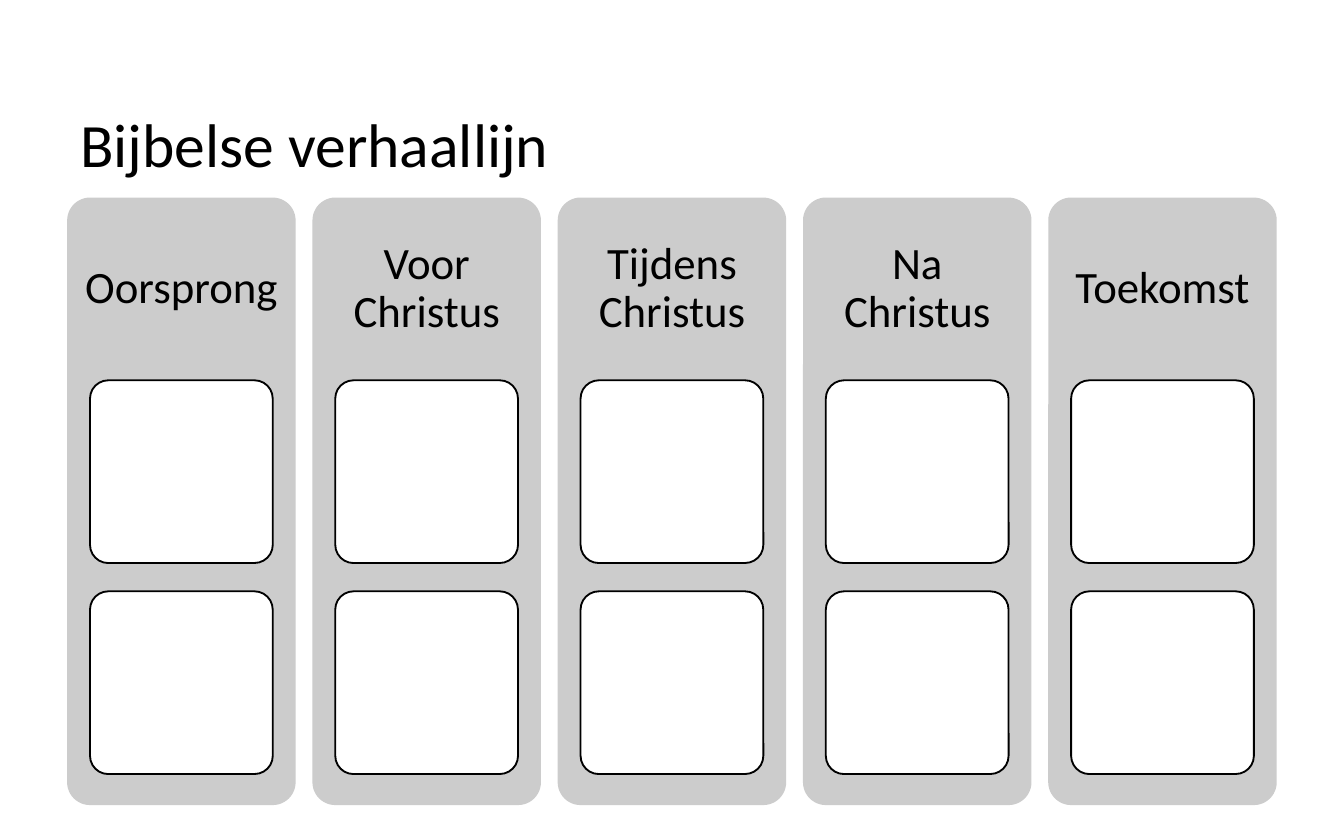
from pptx import Presentation
from pptx.dml.color import RGBColor
from pptx.enum.shapes import MSO_SHAPE
from pptx.enum.text import MSO_ANCHOR, PP_ALIGN
from pptx.util import Inches, Pt

COLORS = {"panel": "CCCCCC", "card": "FFFFFF", "ink": "000000"}
FONT = "Calibri"

PERIODS = ["Oorsprong", "Voor Christus", "Tijdens Christus", "Na Christus", "Toekomst"]

# Column grid, in inches
LEFT, TOP = 0.5, 1.47
TOTAL_WIDTH = 9
PANEL_WIDTH, PANEL_HEIGHT = 1.7, 4.52
PITCH = (TOTAL_WIDTH - PANEL_WIDTH) / (len(PERIODS) - 1)
HEADING_HEIGHT = 1.36
CARD_SIZE = 1.36
CARD_INDENT = (PANEL_WIDTH - CARD_SIZE) / 2
CARD_TOPS = [2.83, 4.4]


def color(name):
    return RGBColor.from_string(COLORS[name])


def add_text(slide, text, left, top, width, height, *, size,
             align=PP_ALIGN.LEFT, margin_x=0.1, margin_y=0.05):
    box = slide.shapes.add_textbox(Inches(left), Inches(top), Inches(width), Inches(height))
    frame = box.text_frame
    frame.word_wrap = True
    frame.vertical_anchor = MSO_ANCHOR.MIDDLE
    frame.margin_left = frame.margin_right = Inches(margin_x)
    frame.margin_top = frame.margin_bottom = Inches(margin_y)
    paragraph = frame.paragraphs[0]
    paragraph.alignment = align
    paragraph.line_spacing = 0.9
    run = paragraph.add_run()
    run.text = text
    run.font.name = FONT
    run.font.size = Pt(size)
    run.font.color.rgb = color("ink")


def add_rounded(slide, left, top, width, height, *, fill, outline=None):
    shape = slide.shapes.add_shape(MSO_SHAPE.ROUNDED_RECTANGLE, Inches(left),
                                   Inches(top), Inches(width), Inches(height))
    shape.adjustments[0] = 0.1
    shape.shadow.inherit = False
    shape.fill.solid()
    shape.fill.fore_color.rgb = color(fill)
    if outline:
        shape.line.color.rgb = color(outline)
        shape.line.width = Pt(1)
    else:
        shape.line.fill.background()


def add_period(slide, name, left):
    """One column: grey panel, heading and empty cards."""
    add_rounded(slide, left, TOP, PANEL_WIDTH, PANEL_HEIGHT, fill="panel")
    add_text(slide, name, left, TOP, PANEL_WIDTH, HEADING_HEIGHT, size=24,
             align=PP_ALIGN.CENTER, margin_y=0.1)
    for card_top in CARD_TOPS:
        add_rounded(slide, left + CARD_INDENT, card_top, CARD_SIZE, CARD_SIZE,
                    fill="card", outline="ink")


def main():
    prs = Presentation()
    prs.slide_width, prs.slide_height = Inches(10), Inches(6.25)
    slide = prs.slides.add_slide(prs.slide_layouts[6])

    # Story line columns
    for index, name in enumerate(PERIODS):
        add_period(slide, name, LEFT + index * PITCH)

    # Title
    add_text(slide, "Bijbelse verhaallijn", LEFT, 0.61, TOTAL_WIDTH, 0.97, size=33)

    prs.save("out.pptx")


if __name__ == "__main__":
    main()
